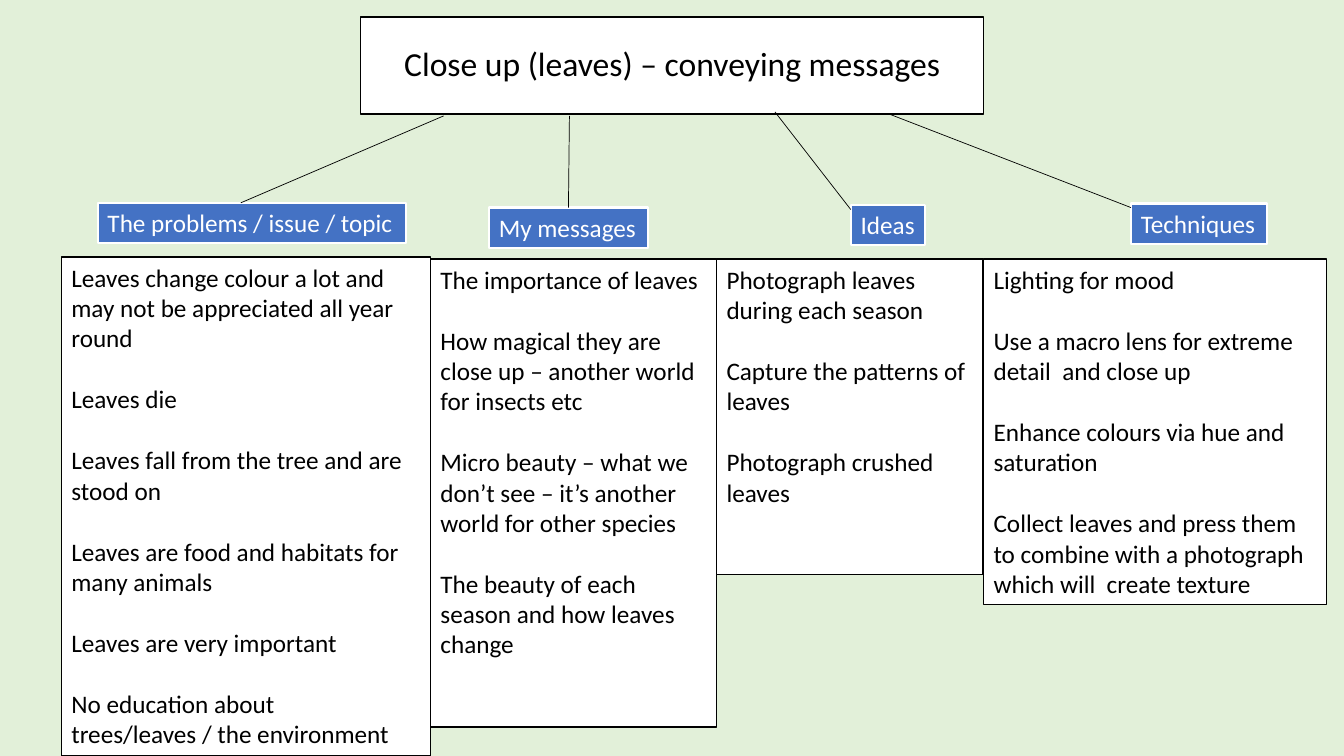
from dataclasses import dataclass
from typing import Optional

import pptx
import pptx.dml.color
import pptx.enum.shapes
import pptx.enum.text
import pptx.oxml
import pptx.shapes.autoshape
import pptx.slide
import pptx.util
from pptx.util import Cm, Pt

BLACK = pptx.dml.color.RGBColor(0x00, 0x00, 0x00)
WHITE = pptx.dml.color.RGBColor(0xFF, 0xFF, 0xFF)
BLUE = pptx.dml.color.RGBColor(0x44, 0x72, 0xC4)
PALE_GREEN = pptx.dml.color.RGBColor(0xE2, 0xF0, 0xD9)

FONT = "Calibri"
TITLE_SIZE = Pt(24)
TEXT_SIZE = Pt(18)
THOUGHT_GAP = Pt(22)
HEADING_HEIGHT = 1.02


@dataclass(frozen=True)
class Box:
    left: float
    top: float
    width: float
    height: float


@dataclass(frozen=True)
class Branch:
    """One heading with its thoughts; branch_start and branch_end are (x, y) in cm.

    Without a branch_start the line is joined to the heading's top middle.
    """
    heading: str
    heading_box: Box
    thoughts: tuple[str, ...]
    thoughts_box: Box
    branch_end: tuple[float, float]
    branch_start: Optional[tuple[float, float]] = None


BRANCHES = (
    Branch(
        "The problems / issue / topic", Box(2.46, 5.11, 7.77, HEADING_HEIGHT),
        ("Leaves change colour a lot and may not be appreciated all year round",
         "Leaves die",
         "Leaves fall from the tree and are stood on",
         "Leaves are food and habitats for many animals",
         "Leaves are very important",
         "No education about trees/leaves / the environment"),
        Box(1.55, 6.48, 9.3, 12.57), (11.18, 2.92), (6.07, 5.11)),
    Branch(
        "My messages", Box(12.32, 5.23, 4.01, HEADING_HEIGHT),
        ("The importance of leaves",
         "How magical they are close up – another world for insects etc",
         "Micro beauty – what we don’t see – it’s another world for other species",
         "The beauty of each season and how leaves change"),
        Box(10.85, 6.53, 7.21, 11.79), (14.35, 2.92)),
    Branch(
        "Ideas", Box(21.44, 5.16, 1.88, HEADING_HEIGHT),
        ("Photograph leaves during each season",
         "Capture the patterns of leaves",
         "Photograph crushed leaves"),
        Box(18.06, 6.53, 6.71, 7.95), (19.53, 2.82), (21.44, 5.28)),
    Branch(
        "Techniques", Box(28.5, 5.13, 3.43, HEADING_HEIGHT),
        ("Lighting for mood",
         "Use a macro lens for extreme detail  and close up",
         "Enhance colours via hue and saturation",
         "Collect leaves and press them to combine with a photograph "
         "which will  create texture"),
        Box(24.79, 6.53, 8.64, 8.71), (22.4, 2.87), (28.5, 5.23)),
)


def paint(shape: pptx.shapes.autoshape.Shape, fill: pptx.dml.color.RGBColor,
          outline: pptx.dml.color.RGBColor, outline_width: float) -> None:
    shape.fill.solid()
    shape.fill.fore_color.rgb = fill
    shape.line.color.rgb = outline
    shape.line.width = Pt(outline_width)


def format_text(shape: pptx.shapes.autoshape.Shape, size: pptx.util.Length,
                color: pptx.dml.color.RGBColor) -> None:
    for paragraph in shape.text_frame.paragraphs:
        for run in paragraph.runs:
            run.font.name = FONT
            run.font.size = size
            run.font.color.rgb = color


def add_text(slide: pptx.slide.Slide, box: Box, text: str, wrap: bool,
             color: pptx.dml.color.RGBColor) -> pptx.shapes.autoshape.Shape:
    shape = slide.shapes.add_textbox(
        Cm(box.left), Cm(box.top), Cm(box.width), Cm(box.height))
    shape.text_frame.word_wrap = wrap
    shape.text_frame.text = text
    format_text(shape, TEXT_SIZE, color)
    return shape


def add_title(slide: pptx.slide.Slide) -> None:
    title = slide.shapes.title
    title.left, title.top = Cm(9.09), Cm(0.43)
    title.width, title.height = Cm(15.7), Cm(2.44)
    paint(title, WHITE, BLACK, 1)
    frame = title.text_frame
    frame.text = "Close up (leaves) – conveying messages"
    frame.vertical_anchor = pptx.enum.text.MSO_ANCHOR.MIDDLE
    frame.paragraphs[0].alignment = pptx.enum.text.PP_ALIGN.CENTER
    frame.paragraphs[0].line_spacing = 0.9
    format_text(title, TITLE_SIZE, BLACK)


def add_branch(slide: pptx.slide.Slide, branch: Branch) -> None:
    thoughts = add_text(
        slide, branch.thoughts_box, "\n".join(branch.thoughts), True, BLACK)
    paint(thoughts, WHITE, BLACK, 1)
    for paragraph in thoughts.text_frame.paragraphs[1:]:
        paragraph.space_before = THOUGHT_GAP

    heading = add_text(slide, branch.heading_box, branch.heading, False, WHITE)
    paint(heading, BLUE, WHITE, 1.5)

    start_x, start_y = branch.branch_start or branch.branch_end
    end_x, end_y = branch.branch_end
    line = slide.shapes.add_connector(
        pptx.enum.shapes.MSO_CONNECTOR.STRAIGHT,
        Cm(start_x), Cm(start_y), Cm(end_x), Cm(end_y))
    if branch.branch_start is None:
        line.begin_connect(heading, 0)
    line.line.color.rgb = BLACK
    line.line.width = Pt(0.5)
    line.element.spPr.append(pptx.oxml.parse_xml(
        '<a:effectLst xmlns:a="http://schemas.openxmlformats.org/drawingml/2006/main"/>'))


def main() -> None:
    presentation = pptx.Presentation()
    presentation.slide_width, presentation.slide_height = Cm(33.87), Cm(19.05)
    title_only = presentation.slide_layouts[5]
    slide = presentation.slides.add_slide(title_only)
    slide.background.fill.solid()
    slide.background.fill.fore_color.rgb = PALE_GREEN
    add_title(slide)
    for branch in BRANCHES:
        add_branch(slide, branch)
    presentation.save("out.pptx")


if __name__ == "__main__":
    main()
